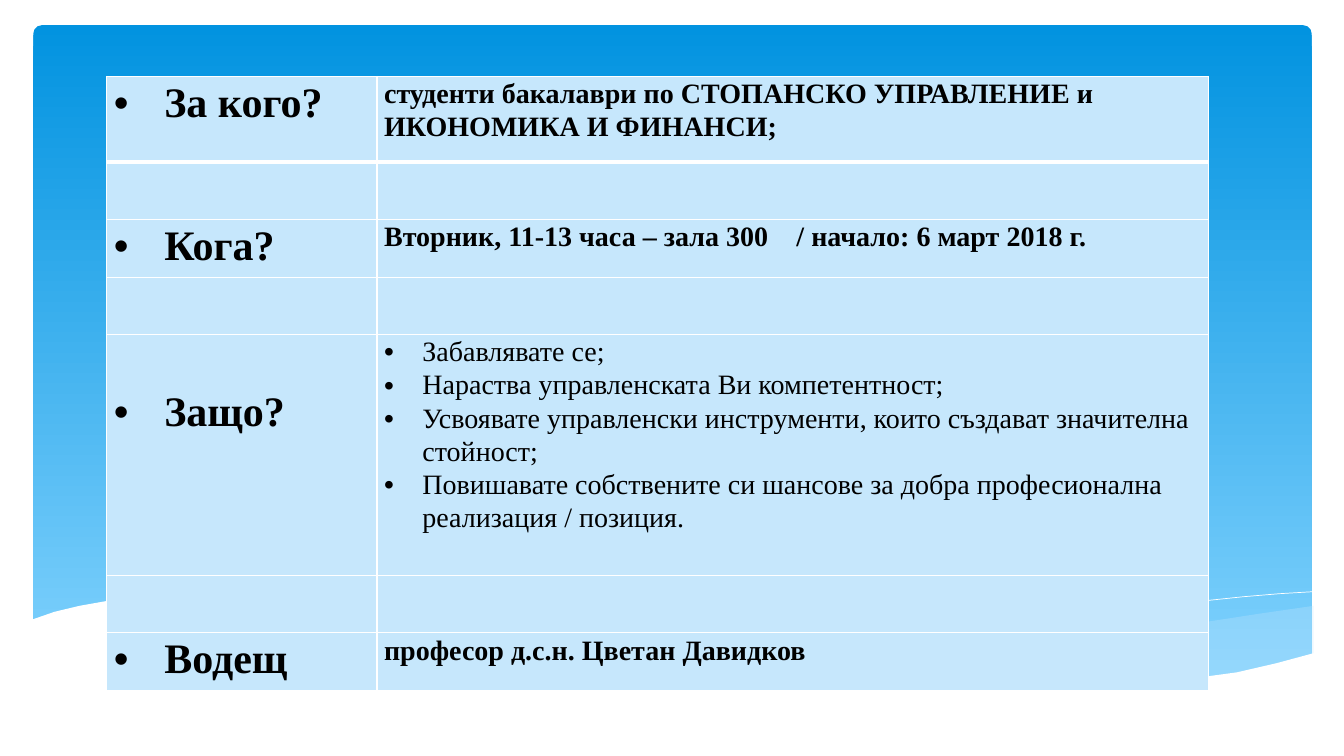
from lxml.etree import SubElement
from pptx import Presentation
from pptx.dml.color import RGBColor
from pptx.enum.shapes import MSO_SHAPE as Preset
from pptx.enum.text import MSO_ANCHOR as Anchor
from pptx.oxml.ns import qn
from pptx.util import Inches, Pt

FONT = "Times New Roman"
WHITE, BLACK, PALE = "FFFFFF", "000000", "C6E7FC"

WHITE_WAVE = [
    (13.03, 6.48), (12.66, 6.58), (12.27, 6.67), (11.83, 6.73), (11.34, 6.77),
    (10.78, 6.79), (10.15, 6.77), (9.44, 6.72), (8.63, 6.64), (7.72, 6.51),
    (6.71, 6.35), (5.96, 6.22), (5.21, 6.09), (4.53, 5.99), (3.9, 5.92),
    (3.33, 5.88), (2.82, 5.86), (2.14, 5.86), (1.58, 5.89), (1.13, 5.95),
    (0.79, 6.01), (0.54, 6.07), (0.31, 6.15), (0.31, 7.31), (13.03, 7.31)]
PALE_WAVE = [
    (13.03, 6.01), (12.48, 6.09), (11.9, 6.18), (11.49, 6.25), (10.75, 6.39),
    (10.06, 6.5), (9.42, 6.59), (8.83, 6.67), (9.41, 6.73), (9.94, 6.77),
    (10.87, 6.8), (11.4, 6.78), (11.87, 6.74), (12.29, 6.67), (12.67, 6.59),
    (13.03, 6.49)]
WAVE_CREST = [
    (8.19, 6.59), (8.71, 6.48), (9.28, 6.37), (9.98, 6.25), (10.76, 6.12),
    (11.56, 6), (11.95, 5.96), (12.33, 5.92), (12.69, 5.89), (13.02, 5.87)]

COLUMN_WIDTHS = [2.68, 8.25]
ROW_HEIGHTS = [0.85, 0.57, 0.57, 0.57, 2.39, 0.57, 0.57]
REASONS = [
    "Забавлявате се;",
    "Нараства управленската Ви компетентност;",
    "Усвоявате управленски инструменти, които създават значителна стойност;",
    "Повишавате собствените си шансове за добра професионална реализация / позиция."]
COURSE_FACTS = {
    0: ("За кого?", ["студенти бакалаври по СТОПАНСКО УПРАВЛЕНИЕ и ИКОНОМИКА И ФИНАНСИ;"]),
    2: ("Кога?", ["Вторник, 11-13 часа – зала 300\t/ начало: 6 март 2018 г."]),
    4: ("Защо?", REASONS),
    6: ("Водещ", ["професор д.с.н. Цветан Давидков"])}


def color(hex_string):
    """Turn a hex string into a colour."""
    return RGBColor.from_string(hex_string)


def add_wave(slide, points, closed=True):
    """Draw an outline through points given in inches."""
    corners = [(Inches(x), Inches(y)) for x, y in points]
    builder = slide.shapes.build_freeform(*corners[0], scale=1.0)
    builder.add_line_segments(corners[1:], close=closed)
    wave = builder.convert_to_shape()
    wave.shadow.inherit = False
    return wave


def fill_wave(wave, hex_string, opacity=100):
    """Fill a wave without an outline."""
    wave.fill.solid()
    wave.fill.fore_color.rgb = color(hex_string)
    wave.line.fill.background()
    if opacity < 100:
        tone = wave.fill._xPr.find(qn("a:solidFill"))[0]
        SubElement(tone, qn("a:alpha"), val=str(opacity * 1000))


def add_backdrop(slide, left, top, width, height):
    """Draw the blue panel and the waves along its foot."""
    panel = slide.shapes.add_shape(
        Preset.ROUNDED_RECTANGLE, *map(Inches, (left, top, width, height)))
    panel.adjustments[0] = 0.013
    panel.shadow.inherit = False
    panel.line.fill.background()
    panel.fill.gradient()
    panel.fill.gradient_angle = 270
    for stop, tone in zip(panel.fill.gradient_stops, ("0293E0", "83D3FE")):
        stop.color.rgb = color(tone)

    fill_wave(add_wave(slide, PALE_WAVE), PALE, 29)
    crest = add_wave(slide, WAVE_CREST, closed=False)
    crest.fill.background()
    crest.line.color.rgb = color(WHITE)
    crest.line.width = Pt(0.5)
    fill_wave(add_wave(slide, WHITE_WAVE), WHITE)


def style_cell(cell, bottom_width):
    """Give a cell white borders, a pale fill and tight margins."""
    properties = cell._tc.get_or_add_tcPr()
    for side, width in (("L", 1), ("R", 1), ("T", 1), ("B", bottom_width)):
        border = SubElement(properties, qn(f"a:ln{side}"), w=str(Pt(width)))
        SubElement(SubElement(border, qn("a:solidFill")), qn("a:srgbClr"), val=WHITE)
    cell.fill.solid()
    cell.fill.fore_color.rgb = color(PALE)
    cell.vertical_anchor = Anchor.TOP
    cell.margin_left = cell.margin_right = Inches(0.07)
    cell.margin_top = cell.margin_bottom = 0


def write_cell(cell, lines, size, bold, indent=0):
    """Write lines into a cell, bulleted when an indent is given."""
    frame = cell.text_frame
    for number, line in enumerate(lines):
        paragraph = frame.add_paragraph() if number else frame.paragraphs[0]
        properties = paragraph._p.get_or_add_pPr()
        if indent:
            properties.set("marL", str(Inches(indent)))
            properties.set("indent", str(-Inches(indent)))
            SubElement(properties, qn("a:buFont"), typeface="Arial")
            SubElement(properties, qn("a:buChar"), char="•")
        if "\t" in line:
            stops = SubElement(properties, qn("a:tabLst"))
            SubElement(stops, qn("a:tab"), pos=str(Inches(4.09)), algn="l")
        paragraph.line_spacing = 1.07
        run = paragraph.add_run()
        run.text = line
        run.font.name = FONT
        run.font.size = Pt(size)
        run.font.bold = bold
        run.font.color.rgb = color(BLACK)


def add_course_table(slide, left, top):
    """Build the table of questions and answers about the course."""
    table = slide.shapes.add_table(
        len(ROW_HEIGHTS), len(COLUMN_WIDTHS), Inches(left), Inches(top),
        Inches(sum(COLUMN_WIDTHS)), Inches(sum(ROW_HEIGHTS))).table
    table.first_row = table.horz_banding = False
    for column, width in zip(table.columns, COLUMN_WIDTHS):
        column.width = Inches(width)
    for number, height in enumerate(ROW_HEIGHTS):
        table.rows[number].height = Inches(height)
        for cell in table.rows[number].cells:
            style_cell(cell, 1 if number else 3)
    for number, (question, answers) in COURSE_FACTS.items():
        listed = len(answers) > 1
        question_cell, answer_cell = table.rows[number].cells
        write_cell(question_cell, [question], 30, True, 0.5)
        write_cell(answer_cell, answers, 20, not listed, 0.38 if listed else 0)
        if listed:
            question_cell.margin_top = Inches(0.51)


def main():
    """Build and save the slide."""
    deck = Presentation()
    deck.slide_width, deck.slide_height = Inches(13.33), Inches(7.5)
    slide = deck.slides.add_slide(deck.slide_layouts[6])
    add_backdrop(slide, 0.33, 0.25, 12.68, 6.6)
    add_course_table(slide, 1.06, 0.76)
    deck.save("out.pptx")


if __name__ == "__main__":
    main()
